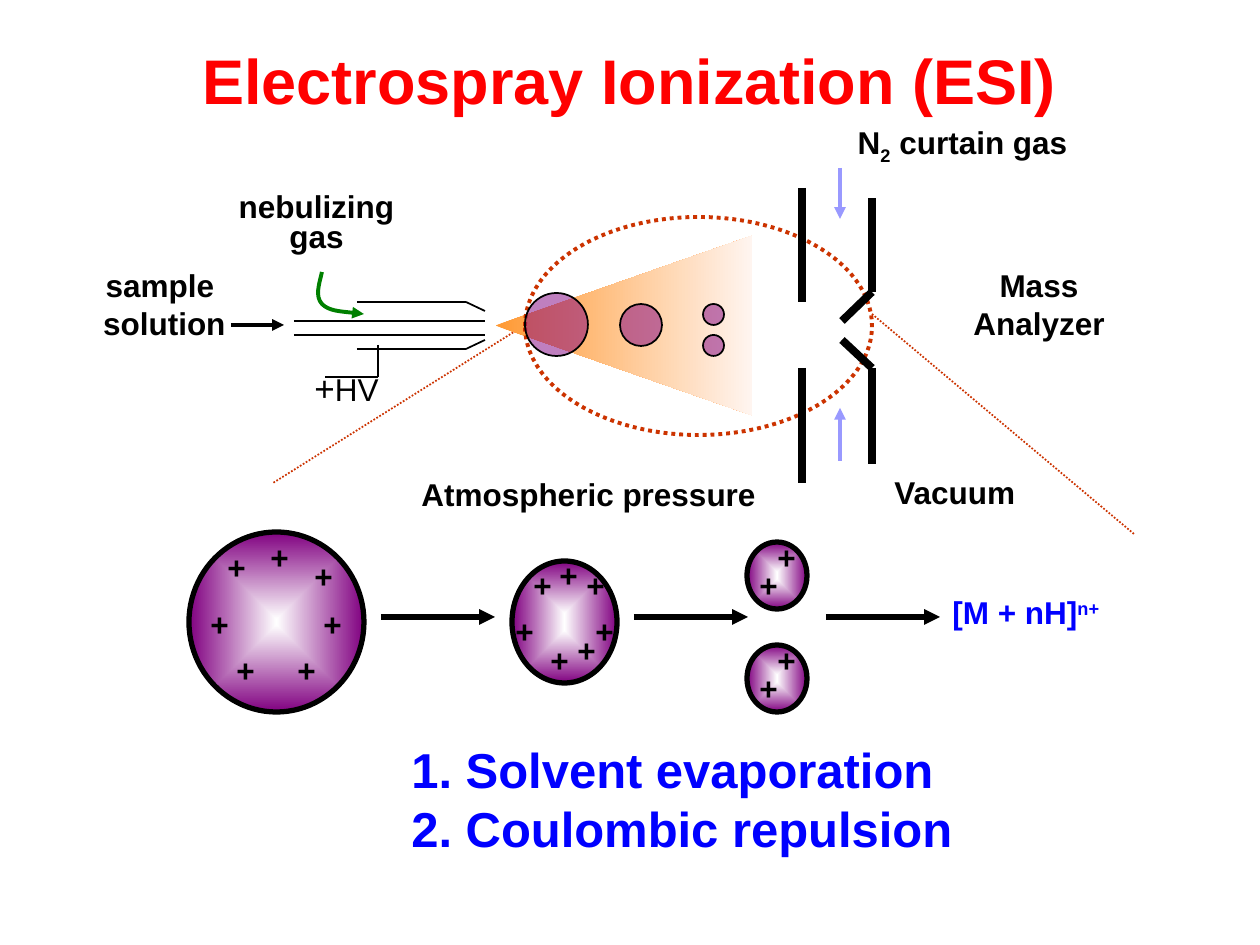
from lxml import etree
from pptx import Presentation
from pptx import util as u
from pptx.dml import color
from pptx.enum import dml, shapes, text
from pptx.oxml import ns, xmlchemy

SCALE = 914400 / 126
FONT = "Arial"
BLACK, RED, BLUE, GREEN = "000000", "FF0000", "0000FF", "008000"
RUST, LILAC, PURPLE, ORANGE, CREAM = "CC3300", "9999FF", "800080", "FF9933", "FFF5F0"


def px(length):
    """Turn a length in px into EMU."""
    return u.Emu(round(length * SCALE))


def rgb(value):
    """Turn a hex string into a colour."""
    return color.RGBColor.from_string(value)


def child(parent, tag, **attributes):
    """Append a DrawingML element to a parent and return it."""
    element = etree.SubElement(parent, ns.qn("a:" + tag))
    for name, value in attributes.items():
        element.set(name, str(value))
    return element


def style_line(shape, hex_color, width, dotted=False, arrow=False):
    """Set the colour, width, dots and arrowhead of an outline."""
    shape.line.color.rgb = rgb(hex_color)
    shape.line.width = u.Pt(width)
    if dotted:
        shape.line.dash_style = dml.MSO_LINE.ROUND_DOT
    if arrow:
        child(shape.line._get_or_add_ln(), "tailEnd", type="triangle")


def add_line(slide, origin, start, end, hex_color=BLACK, width=1, **options):
    """Draw a straight connector between two points of a region."""
    left, top = origin
    connector = slide.shapes.add_connector(
        shapes.MSO_CONNECTOR.STRAIGHT,
        px(left + start[0]), px(top + start[1]), px(left + end[0]), px(top + end[1]))
    style_line(connector, hex_color, width, **options)
    child(connector._element.spPr, "effectLst")


def add_preset(slide, origin, box, kind=shapes.MSO_SHAPE.OVAL):
    """Add a preset shape without shadow to a region."""
    left, top, width, height = box
    shape = slide.shapes.add_shape(
        kind, px(origin[0] + left), px(origin[1] + top), px(width), px(height))
    shape.shadow.inherit = False
    return shape


def fill_gradient(shape, first, last, radial=False):
    """Fill a shape with two colours, across it or from its centre."""
    shape.fill.gradient()
    gradient = shape._element.spPr.find(ns.qn("a:gradFill"))
    for part in list(gradient):
        gradient.remove(part)
    gradient.set("rotWithShape", "0")
    stops = child(gradient, "gsLst")
    for position, value in ((0, first), (100000, last)):
        child(child(stops, "gs", pos=position), "srgbClr", val=value)
    if radial:
        middle = dict.fromkeys("ltrb", 50000)
        child(child(gradient, "path", path="shape"), "fillToRect", **middle)
    else:
        child(gradient, "lin", ang=0, scaled=1)


def add_text(slide, origin, box, paragraphs, size=18, hex_color=BLACK, bold=True,
             centred=False, spacing=None):
    """Add a text box whose paragraphs are lists of (text, run attributes)."""
    left, top, width, height = box
    shape = slide.shapes.add_textbox(
        px(origin[0] + left), px(origin[1] + top), px(width), px(height))
    frame = shape.text_frame
    frame.word_wrap = False
    frame.auto_size = text.MSO_AUTO_SIZE.SHAPE_TO_FIT_TEXT
    for index, runs in enumerate(paragraphs):
        paragraph = frame.add_paragraph() if index else frame.paragraphs[0]
        paragraph.alignment = text.PP_ALIGN.CENTER if centred else text.PP_ALIGN.LEFT
        paragraph.line_spacing = spacing
        for words, options in runs:
            run = paragraph.add_run()
            run.text = words
            run.font.name = FONT
            run.font.size = u.Pt(options.get("size", size))
            run.font.bold = bold
            run.font.color.rgb = rgb(hex_color)
            if "baseline" in options:
                run.font._element.set("baseline", str(options["baseline"]))
    return shape


def plain(*lines):
    """Make one single-run paragraph of each line."""
    return [[(line, {})] for line in lines]


def add_title(slide, box):
    """Place the slide title in the middle of its box."""
    shape = add_text(slide, (0, 0), box, plain("Electrospray Ionization (ESI)"),
                     size=36, hex_color=RED, centred=True)
    frame = shape.text_frame
    frame.auto_size = text.MSO_AUTO_SIZE.NONE
    frame.word_wrap = True
    frame.vertical_anchor = text.MSO_ANCHOR.MIDDLE


def add_plume(slide, origin):
    """Place the spray cone, its dotted zoom outline and its droplets."""
    for start, end in (((252, 128), (0, 286)), ((599, 117), (861, 337))):
        add_line(slide, origin, start, end, RUST, dotted=True)
    cone = add_preset(slide, origin, (261, 0, 180, 257), shapes.MSO_SHAPE.FLOWCHART_EXTRACT)
    cone.rotation = 270
    fill_gradient(cone, ORANGE, CREAM)
    cone.line.fill.background()
    zoom = add_preset(slide, origin, (252, 20, 347, 218))
    zoom.fill.background()
    style_line(zoom, RUST, 2.25, dotted=True)
    for left, top, size in ((252, 96, 63), (347, 107, 42), (430, 138, 21), (430, 107, 21)):
        droplet = add_preset(slide, origin, (left, top, size, size))
        droplet.fill.solid()
        droplet.fill.fore_color.rgb = rgb(PURPLE)
        child(droplet._element.spPr.find(".//" + ns.qn("a:srgbClr")), "alpha", val=50000)
        style_line(droplet, BLACK, 1)


def add_interface(slide, origin):
    """Place the walls, the curtain gas and the labels of the vacuum inlet."""
    walls = (((393, 251), (393, 366)), ((393, 71), (393, 185)),
             ((463, 251), (463, 347)), ((433, 223), (463, 251)),
             ((463, 175), (463, 81)), ((433, 204), (463, 175)))
    for start, end in walls:
        add_line(slide, origin, start, end, width=4.5)
    for start, end in (((431, 344), (431, 291)), ((431, 51), (431, 102))):
        add_line(slide, origin, start, end, LILAC, 2.25, arrow=True)
    add_text(slide, origin, (473, 350, 189, 63), plain("Vacuum"))
    add_text(slide, origin, (0, 352, 471, 63), plain("Atmospheric pressure"))
    add_text(slide, origin, (530, 143, 200, 113), plain("Mass", "Analyzer"), centred=True)
    curtain = [[("N", {}), ("2", {"baseline": -25000}), (" curtain gas", {})]]
    add_text(slide, origin, (400, 0, 307, 63), curtain, centred=True)


def add_gas_curve(slide, origin, points):
    """Draw a curved arrow through Bezier points of a region."""
    placed = [(origin[0] + x, origin[1] + y) for x, y in points]
    builder = slide.shapes.build_freeform(*placed[0], scale=SCALE)
    builder.add_line_segments(placed[1:], close=False)
    curve = builder.convert_to_shape()
    curve.shadow.inherit = False
    curve.fill.background()
    style_line(curve, GREEN, 2.25, arrow=True)
    segments = list(curve._element.iter(ns.qn("a:lnTo")))
    for index in range(0, len(segments), 3):
        bezier = xmlchemy.OxmlElement("a:cubicBezTo")
        segments[index].addprevious(bezier)
        for segment in segments[index:index + 3]:
            bezier.append(segment[0])
            segment.getparent().remove(segment)


def add_sprayer(slide, origin):
    """Place the capillary, the high voltage lead and the two feeds."""
    for y in (133, 147):
        add_line(slide, origin, (234, y), (425, y))
    for y, tip in ((114, 123), (161, 152)):
        add_line(slide, origin, (297, y), (406, y))
        add_line(slide, origin, (406, y), (425, tip))
    add_line(slide, origin, (318, 157), (318, 189))
    add_line(slide, origin, (318, 189), (265, 189))
    add_text(slide, origin, (242, 172, 105, 63), [[("+", {"size": 20}), ("HV", {})]], bold=False)
    add_gas_curve(slide, origin, [(262, 84), (259, 97), (255, 108), (262, 116),
                                  (269, 123), (287, 124), (304, 126)])
    add_line(slide, origin, (171, 137), (224, 137), width=2.25, arrow=True)
    add_text(slide, origin, (140, 0, 233, 93), plain("nebulizing", "gas"),
             centred=True, spacing=0.8)
    add_text(slide, origin, (0, 72, 200, 113), plain("sample", " solution"), centred=True)


def add_charged_droplet(slide, origin, box, charges):
    """Place a shaded droplet and the plus signs inside it."""
    droplet = add_preset(slide, origin, box)
    fill_gradient(droplet, "FFFFFF", PURPLE, radial=True)
    style_line(droplet, BLACK, 3)
    for x, y in charges:
        add_text(slide, origin, (box[0] + x, box[1] + y, 50, 63), plain("+"))


def add_fission(slide, origin):
    """Place the row of shrinking droplets that ends in the ion."""
    add_charged_droplet(slide, origin, (0, 0, 175, 180), (
        (113, 19), (9, 67), (122, 67), (35, 113), (96, 113), (26, 10), (69, 0)))
    add_charged_droplet(slide, origin, (323, 29, 105, 122), (
        (-9, 45), (9, -1), (53, 64), (71, 45), (26, 74), (62, -1), (35, -11)))
    for top in (113, 10):
        add_charged_droplet(slide, origin, (558, top, 60, 67), ((18, -10), (0, 18)))
    for left in (192, 445, 637):
        add_line(slide, origin, (left, 85), (left + 114, 85), width=3, arrow=True)
    ion = [[("[M + nH]", {}), ("n+", {"baseline": 30000})]]
    add_text(slide, origin, (751, 55, 226, 63), ion, hex_color=BLUE)


def main():
    """Build the slide and save it."""
    presentation = Presentation()
    presentation.slide_width, presentation.slide_height = px(1260), px(945)
    slide = presentation.slides.add_slide(presentation.slide_layouts[6])
    add_title(slide, (94, 0, 1071, 158))
    add_plume(slide, (273, 197))
    add_interface(slide, (409, 117))
    add_sprayer(slide, (60, 188))
    add_fission(slide, (189, 532))
    add_text(slide, (399, 733), (0, 0, 567, 130),
             plain("1. Solvent evaporation", "2. Coulombic repulsion"), size=28, hex_color=BLUE)
    presentation.save("out.pptx")


if __name__ == "__main__":
    main()
